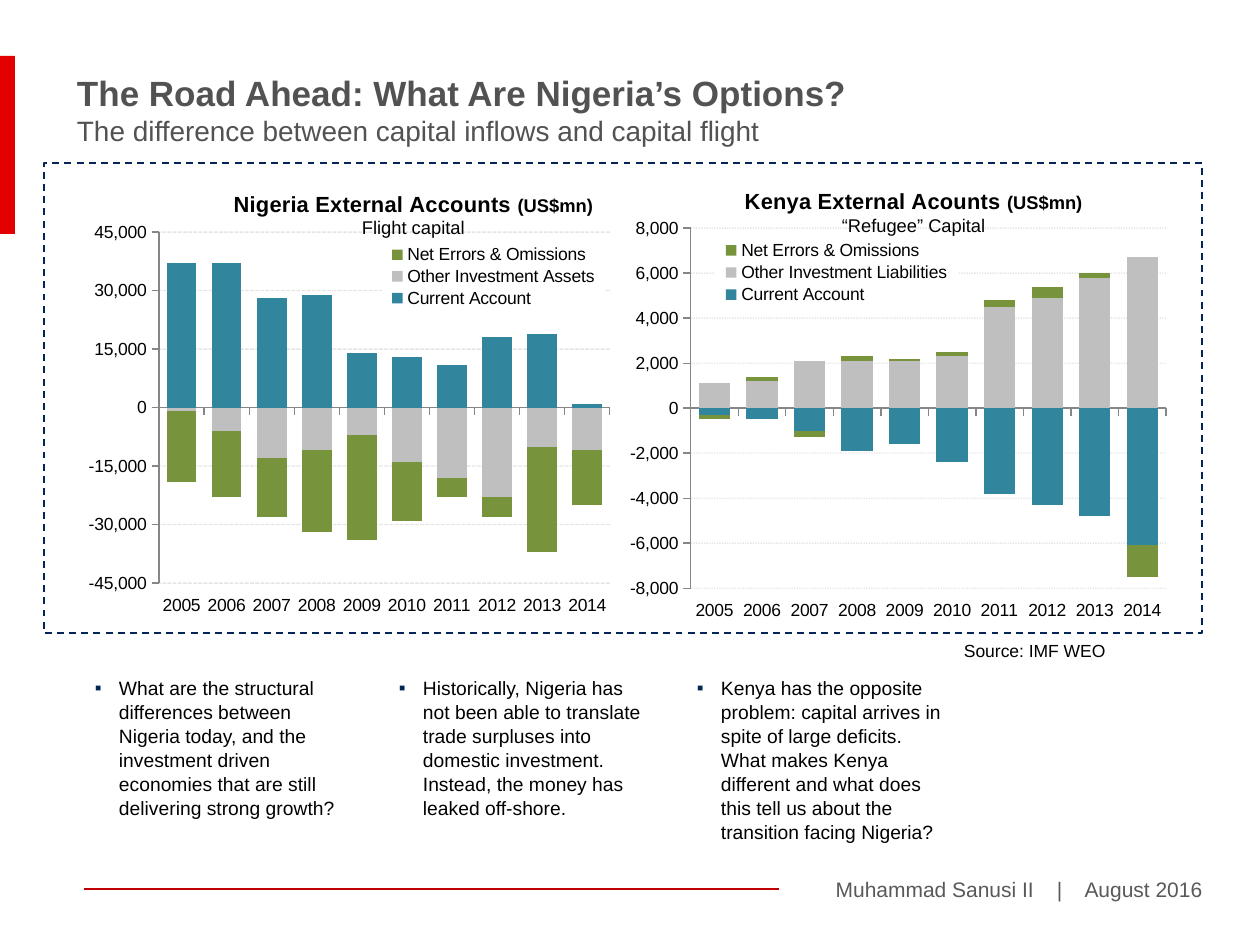
"""Build the slide on capital inflows and capital flight in Nigeria and Kenya."""
from dataclasses import dataclass
from typing import NamedTuple

from lxml import etree
from pptx import Presentation
from pptx.chart.data import CategoryChartData
from pptx.dml.color import RGBColor
from pptx.enum.chart import XL_CHART_TYPE, XL_LEGEND_POSITION, XL_TICK_LABEL_POSITION, XL_TICK_MARK
from pptx.enum.dml import MSO_LINE
from pptx.enum.shapes import MSO_CONNECTOR, MSO_SHAPE
from pptx.enum.text import PP_ALIGN
from pptx.oxml import parse_xml
from pptx.oxml.ns import qn
from pptx.util import Emu, Pt

STACKED = XL_CHART_TYPE.COLUMN_STACKED
LEGEND_RIGHT = XL_LEGEND_POSITION.RIGHT
LABELS_LOW = XL_TICK_LABEL_POSITION.LOW
TICK_OUTSIDE = XL_TICK_MARK.OUTSIDE
DASH, SHORT_DASH, DOT = MSO_LINE.DASH, MSO_LINE.SQUARE_DOT, MSO_LINE.ROUND_DOT
LEFT, CENTER, RIGHT = PP_ALIGN.LEFT, PP_ALIGN.CENTER, PP_ALIGN.RIGHT
BLACK = RGBColor(0x00, 0x00, 0x00)
TITLE_GREY = RGBColor(0x52, 0x52, 0x52)
FOOTER_GREY = RGBColor(0x59, 0x59, 0x59)
AXIS_GREY = RGBColor(0x86, 0x86, 0x86)
NAVY = RGBColor(0x04, 0x25, 0x56)
RED = RGBColor(0xE2, 0x00, 0x00)
DARK_RED = RGBColor(0xC0, 0x00, 0x00)
SERIES_COLORS = (RGBColor(0x31, 0x85, 0x9C), RGBColor(0xBF, 0xBF, 0xBF), RGBColor(0x77, 0x93, 0x3C))
FONT = "Arial"
PX_PER_INCH = 126
YEARS = [str(year) for year in range(2005, 2015)]
CHART_NS = "http://schemas.openxmlformats.org/drawingml/2006/chart"
DRAWING_NS = "http://schemas.openxmlformats.org/drawingml/2006/main"


class Box(NamedTuple):
    left: int
    top: int
    width: int
    height: int


@dataclass(frozen=True)
class AccountsChart:
    box: Box
    plot: Box
    legend: Box
    title_at: tuple[int, int]
    title: str
    subtitle: str
    limit: int
    step: int
    grid_dash: int
    grid_alpha: int
    series: dict[str, list[int]]


CHARTS = (
    AccountsChart(
        Box(72, 164, 558, 470), Box(159, 232, 451, 351), Box(382, 243, 222, 67), (230, 186),
        "Nigeria External Accounts ", "Flight capital", 45000, 15000, SHORT_DASH, 9,
        {
            "Current Account": [37000, 37000, 28000, 29000, 14000, 13000, 11000, 18000, 19000, 1000],
            "Other Investment Assets":
                [-1000, -6000, -13000, -11000, -7000, -14000, -18000, -23000, -10000, -11000],
            "Net Errors & Omissions":
                [-18000, -17000, -15000, -21000, -27000, -15000, -5000, -5000, -27000, -14000],
        },
    ),
    AccountsChart(
        Box(630, 164, 559, 472), Box(690, 228, 476, 360), Box(714, 238, 244, 69), (740, 184),
        "Kenya External Acounts ", "“Refugee” Capital", 8000, 2000, DOT, 10,
        {
            "Current Account": [-300, -500, -1000, -1900, -1600, -2400, -3800, -4300, -4800, -6100],
            "Other Investment Liabilities":
                [1100, 1200, 2100, 2100, 2100, 2300, 4500, 4900, 5800, 6700],
            "Net Errors & Omissions": [-200, 200, -300, 200, 100, 200, 300, 500, 200, -1400],
        },
    ),
)
QUESTIONS = {
    95: "What are the structural differences between Nigeria today, and the investment driven "
        "economies that are still delivering strong growth?",
    399: "Historically, Nigeria has not been able to translate trade surpluses into domestic "
         "investment. Instead, the money has leaked off-shore.",
    697: "Kenya has the opposite problem: capital arrives in spite of large deficits. What makes "
         "Kenya different and what does this tell us about the transition facing Nigeria?",
}


def px(length: int) -> Emu:
    return Emu(round(length * 914400 / PX_PER_INCH))


def place(box: Box) -> list[Emu]:
    return [px(length) for length in box]


def write_text(paragraph, text: str, *, size: float, color: RGBColor = BLACK,
               bold: bool = False, align: int = LEFT) -> None:
    paragraph.alignment = align
    run = paragraph.add_run()
    run.text = text
    font = run.font
    font.name, font.size, font.bold = FONT, Pt(size), bold
    font.color.rgb = color


def add_text_frame(slide, box: Box, margins: Box):
    frame = slide.shapes.add_textbox(*place(box)).text_frame
    frame.word_wrap = True
    frame.margin_left, frame.margin_top, frame.margin_right, frame.margin_bottom = place(margins)
    return frame


def add_rectangle(slide, box: Box):
    shape = slide.shapes.add_shape(MSO_SHAPE.RECTANGLE, *place(box))
    shape.shadow.inherit = False
    return shape


def set_layout(parent, following: str, fractions: dict[str, float], inner: bool = False) -> None:
    for old_layout in parent.findall(qn("c:layout")):
        parent.remove(old_layout)
    target = '<c:layoutTarget val="inner"/>' if inner else ""
    modes = '<c:xMode val="edge"/><c:yMode val="edge"/>'
    values = "".join(f'<c:{name} val="{value:.3f}"/>' for name, value in fractions.items())
    layout = parse_xml(f'<c:layout xmlns:c="{CHART_NS}"><c:manualLayout>{target}{modes}{values}'
                       "</c:manualLayout></c:layout>")
    parent.find(qn(following)).addprevious(layout)


def fractions_of(chart_box: Box, box: Box) -> dict[str, float]:
    return {
        "x": (box.left - chart_box.left) / chart_box.width,
        "y": (box.top - chart_box.top) / chart_box.height,
        "w": box.width / chart_box.width,
        "h": box.height / chart_box.height,
    }


def format_axes(chart, accounts: AccountsChart) -> None:
    for axis in (chart.category_axis, chart.value_axis):
        axis.major_tick_mark = TICK_OUTSIDE
        axis.format.line.color.rgb = AXIS_GREY
    chart.category_axis.tick_label_position = LABELS_LOW
    axis = chart.value_axis
    axis.minimum_scale, axis.maximum_scale = -accounts.limit, accounts.limit
    axis.major_unit = accounts.step
    axis.tick_labels.number_format = "#,##0"
    axis.tick_labels.number_format_is_linked = False
    line = axis.major_gridlines.format.line
    line.width, line.dash_style = Pt(0.75), accounts.grid_dash
    line.color.rgb = BLACK
    color = axis.major_gridlines._xAx.find(".//" + qn("c:majorGridlines") + "//" + qn("a:srgbClr"))
    etree.SubElement(color, qn("a:alpha")).set("val", str(accounts.grid_alpha * 1000))


def add_accounts_chart(slide, accounts: AccountsChart) -> None:
    data = CategoryChartData(number_format="#,##0")
    data.categories = YEARS
    for name, values in accounts.series.items():
        data.add_series(name, values)
    chart = slide.shapes.add_chart(STACKED, *place(accounts.box), data).chart
    chart.font.name, chart.font.size = FONT, Pt(10)
    chart.font.color.rgb = BLACK
    format_axes(chart, accounts)
    plot = chart.plots[0]
    plot.gap_width, plot.overlap, plot.vary_by_categories = 52, 100, False
    for series, color in zip(plot.series, SERIES_COLORS):
        series.invert_if_negative = False
        series.format.fill.solid()
        series.format.fill.fore_color.rgb = color

    title = chart.chart_title
    frame = title.text_frame
    write_text(frame.paragraphs[0], accounts.title, size=12.5, bold=True, align=CENTER)
    write_text(frame.paragraphs[0], "(US$mn)", size=10.5, bold=True, align=CENTER)
    write_text(frame.add_paragraph(), accounts.subtitle, size=10.5, align=CENTER)
    title_box = fractions_of(accounts.box, Box(*accounts.title_at, 0, 0))
    set_layout(title._element, "c:overlay", {name: title_box[name] for name in "xy"})
    title._element.find(qn("c:overlay")).set("val", "1")

    chart.has_legend = True
    legend = chart.legend
    legend.position, legend.include_in_layout = LEGEND_RIGHT, False
    legend.font.name, legend.font.size = FONT, Pt(10)
    set_layout(legend._element, "c:overlay", fractions_of(accounts.box, accounts.legend))
    legend._element.find(qn("c:overlay")).addnext(parse_xml(
        f'<c:spPr xmlns:c="{CHART_NS}" xmlns:a="{DRAWING_NS}"><a:solidFill>'
        '<a:srgbClr val="FFFFFF"/></a:solidFill></c:spPr>'))
    plot_area = chart._chartSpace.find(".//" + qn("c:plotArea"))
    set_layout(plot_area, "c:barChart", fractions_of(accounts.box, accounts.plot), inner=True)


def add_question(slide, left: int, text: str) -> None:
    frame = add_text_frame(slide, Box(left, 675, 251, 184), Box(0, 0, 0, 0))
    paragraph = frame.paragraphs[0]
    write_text(paragraph, text, size=11)
    paragraph.line_spacing = 1.04
    properties = paragraph._p.get_or_add_pPr()
    properties.set("marL", str(px(24)))
    properties.set("indent", str(-px(24)))
    bullet_color = etree.SubElement(properties, qn("a:buClr"))
    etree.SubElement(bullet_color, qn("a:srgbClr")).set("val", str(NAVY))
    etree.SubElement(properties, qn("a:buFont")).set("typeface", FONT)
    etree.SubElement(properties, qn("a:buChar")).set("char", "▪")


def main() -> None:
    presentation = Presentation()
    presentation.slide_width, presentation.slide_height = px(1260), px(945)
    slide = presentation.slides.add_slide(presentation.slide_layouts[6])

    footer = add_text_frame(slide, Box(709, 871, 507, 38), Box(13, 6, 13, 6))
    write_text(footer.paragraphs[0], "Muhammad Sanusi II    |    August 2016",
               size=12, color=FOOTER_GREY, align=RIGHT)
    rule = slide.shapes.add_connector(MSO_CONNECTOR.STRAIGHT, px(84), px(889), px(779), px(889))
    rule.line.color.rgb, rule.line.width = DARK_RED, Pt(1.5)
    etree.SubElement(rule._element.spPr, qn("a:effectLst"))
    accent = add_rectangle(slide, Box(0, 56, 15, 178))
    accent.fill.solid()
    accent.fill.fore_color.rgb = RED
    accent.line.fill.background()

    heading = add_text_frame(slide, Box(64, 66, 1091, 89), Box(13, 6, 13, 6))
    write_text(heading.paragraphs[0], "The Road Ahead: What Are Nigeria’s Options?",
               size=20, color=TITLE_GREY, bold=True)
    write_text(heading.add_paragraph(), "The difference between capital inflows and capital flight",
               size=16, color=TITLE_GREY)
    for accounts in CHARTS:
        add_accounts_chart(slide, accounts)
    for left, text in QUESTIONS.items():
        add_question(slide, left, text)

    border = add_rectangle(slide, Box(44, 163, 1158, 470))
    border.fill.background()
    border.line.color.rgb, border.line.width, border.line.dash_style = NAVY, Pt(1), DASH
    source = add_text_frame(slide, Box(955, 636, 200, 30), Box(9, 4, 9, 5))
    write_text(source.paragraphs[0], "Source: IMF WEO", size=10)
    presentation.save("out.pptx")


if __name__ == "__main__":
    main()
